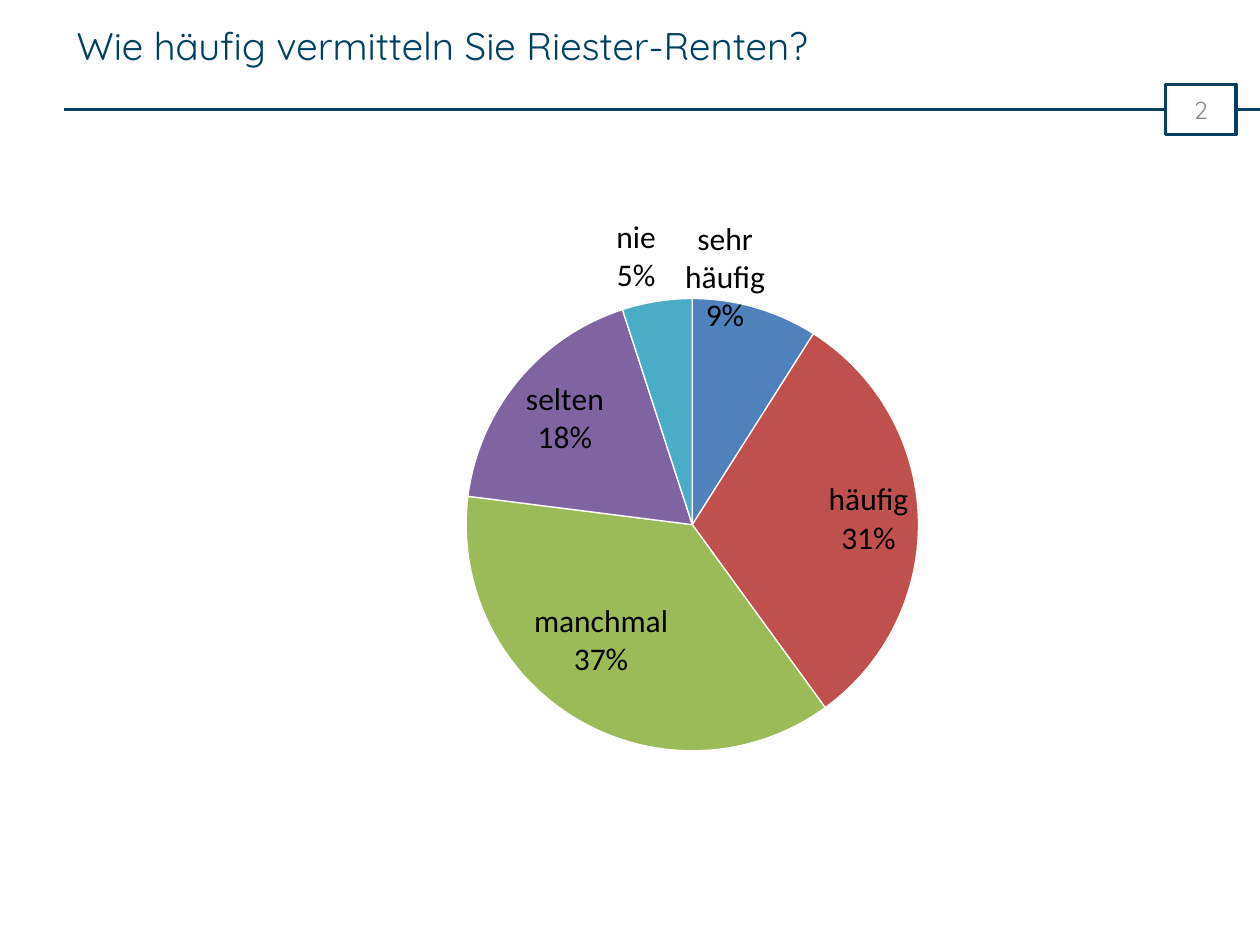
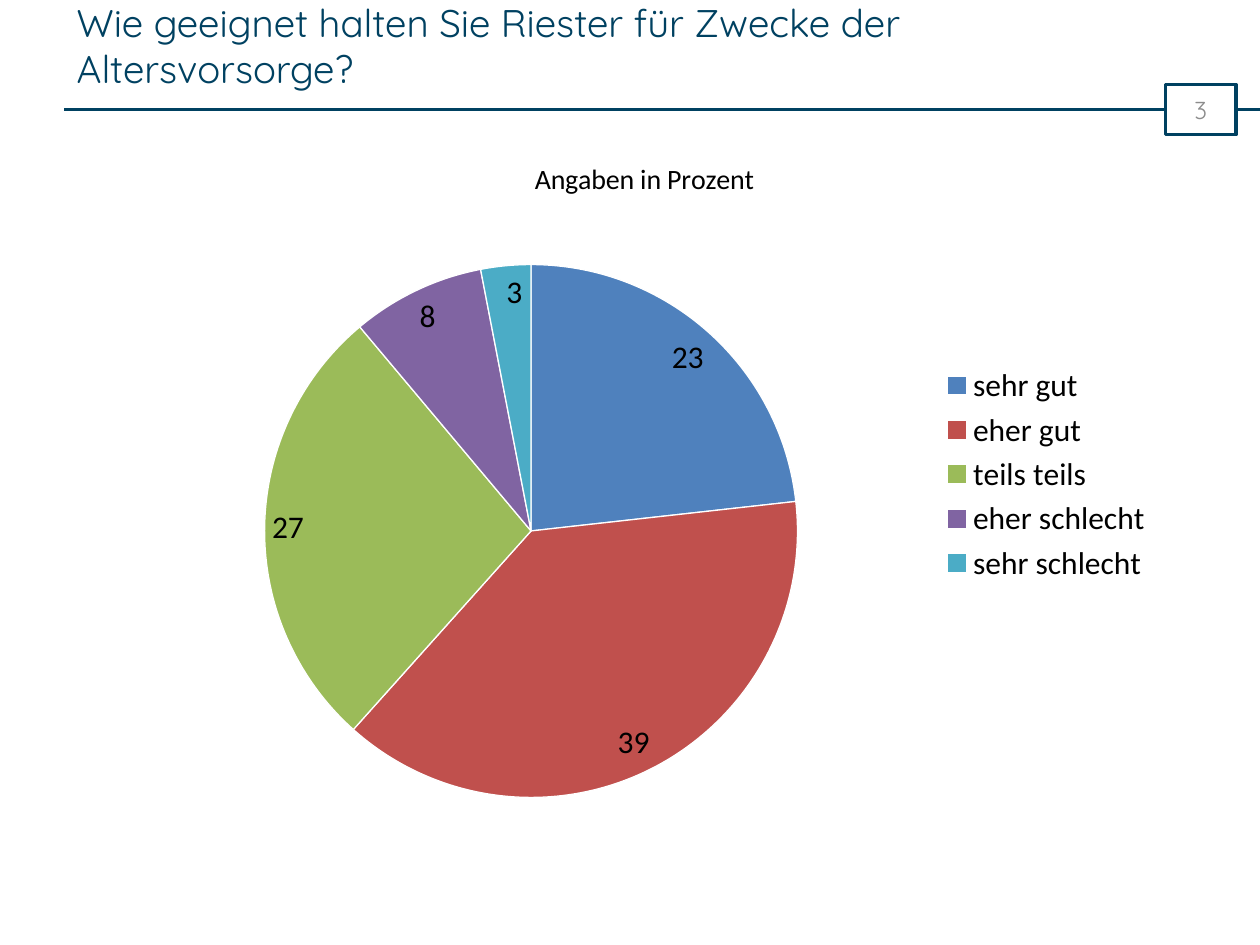
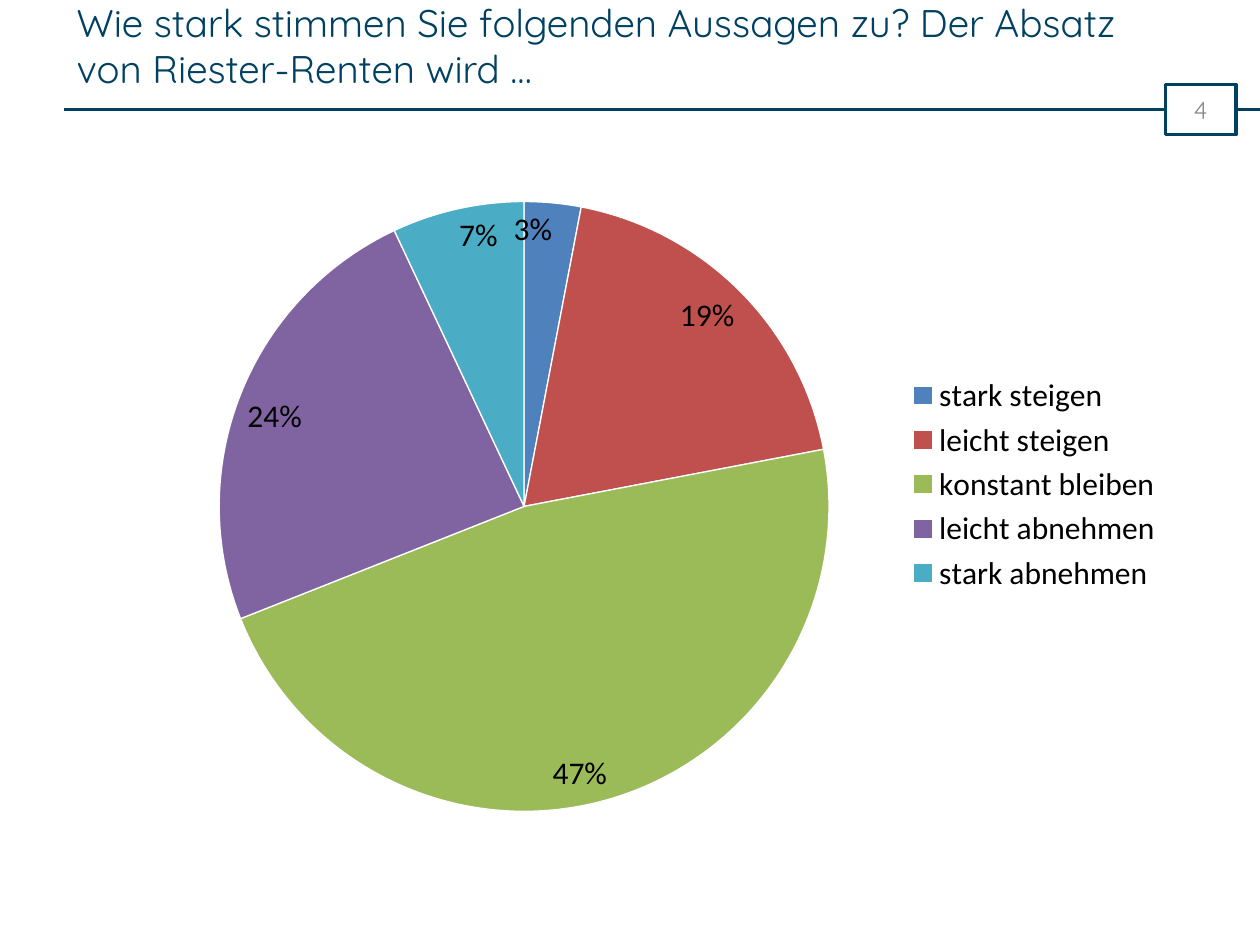
import dataclasses
import pptx
import pptx.chart.data
import pptx.dml.color
import pptx.enum.chart
import pptx.enum.shapes
import pptx.enum.text
import pptx.oxml
import pptx.oxml.ns
import pptx.util


@dataclasses.dataclass(frozen=True)
class Theme:
    navy: str = "004161"
    gray: str = "8C8C8C"
    black: str = "000000"
    white: str = "FFFFFF"
    hues: tuple = ("4F81BD", "C0504D", "9BBB59", "8064A2", "4BACC6")
    head: str = "Quicksand"
    body: str = "Calibri"
    title: int = 22
    label: int = 18
    note: int = 16
    page: int = 14
    rule: int = 2
    edge: float = 0.75


theme = Theme()
rgb = pptx.dml.color.RGBColor.from_string
place = pptx.enum.chart.XL_LABEL_POSITION
middle = pptx.enum.text.MSO_ANCHOR.MIDDLE
center = pptx.enum.text.PP_ALIGN.CENTER


def text(frame, words, size=theme.label, font=theme.body, color=theme.black, align=None, anchor=None):
    if anchor is not None:
        frame.word_wrap = True
        frame.vertical_anchor = anchor
    frame.text = words
    for para in frame.paragraphs:
        if align is not None:
            para.alignment = align
        for run in para.runs:
            run.font.size = pptx.util.Pt(size)
            run.font.name = font
            run.font.bold = False
            run.font.color.rgb = rgb(color)


def layout(**marks):
    tags = "".join(f'<c:{key} val="{val}"/>' for key, val in marks.items())
    space = pptx.oxml.ns.nsdecls("c")
    return pptx.oxml.parse_xml(f"<c:layout {space}><c:manualLayout>{tags}</c:manualLayout></c:layout>")


deck = pptx.Presentation()
deck.slide_width = pptx.util.Inches(10)
deck.slide_height = pptx.util.Inches(7.5)
col = deck.slide_width / 10
row = deck.slide_height / 7.5

wide = (1.14, 1.11, 8.19, 5.47)
pages = [
    dict(title="Wie häufig vermitteln Sie Riester-Renten?",
         name="Series 1", area=wide, pie=(3.7, 2.37, 3.59),
         cats=("sehr häufig", "häufig", "manchmal", "selten", "nie"), vals=(9, 31, 37, 18, 5),
         legend=False, marks={0: "sehr\nhäufig\n9%"}, shift=(-0.07, 0.05)),
    dict(title="Wie geeignet halten Sie Riester für Zwecke der Altersvorsorge?",
         name="Angaben in Prozent", area=(0.98, 1.07, 8.27, 5.39), pie=(2.1, 2.1, 4.23),
         cats=("sehr gut", "eher gut", "teils teils", "eher schlecht", "sehr schlecht"),
         vals=(23, 38, 27, 8, 3),
         legend=True, marks=dict(enumerate(("23", "39", "27", "8", "3"))), note="Angaben in Prozent"),
    dict(title="Wie stark stimmen Sie folgenden Aussagen zu? Der Absatz von Riester-Renten wird …",
         name="Series 1", area=wide, pie=(1.74, 1.6, 4.84),
         cats=("stark steigen", "leicht steigen", "konstant bleiben", "leicht abnehmen", "stark abnehmen"),
         vals=(3, 19, 47, 24, 7), legend=True, marks={}),
]

for num, page in enumerate(pages, 2):
    slide = deck.slides.add_slide(deck.slide_layouts[6])
    shapes = slide.shapes

    rule = shapes.add_connector(pptx.enum.shapes.MSO_CONNECTOR.STRAIGHT,
                                int(0.51 * col), int(0.87 * row), int(10 * col), int(0.87 * row))
    rule.line.color.rgb = rgb(theme.navy)
    rule.line.width = pptx.util.Pt(theme.rule)
    rule._element.spPr.append(pptx.oxml.parse_xml(f"<a:effectLst {pptx.oxml.ns.nsdecls('a')}/>"))

    badge = shapes.add_shape(pptx.enum.shapes.MSO_SHAPE.RECTANGLE,
                             int(9.25 * col), int(0.67 * row), int(0.56 * col), int(0.4 * row))
    badge.shadow.inherit = False
    badge.fill.solid()
    badge.fill.fore_color.rgb = rgb(theme.white)
    badge.line.color.rgb = rgb(theme.navy)
    badge.line.width = pptx.util.Pt(theme.rule)
    text(badge.text_frame, str(num), size=theme.page, font=theme.head, color=theme.gray,
         align=center, anchor=middle)

    title = shapes.add_textbox(int(0.51 * col), int(-0.07 * row), int(8.98 * col), int(0.86 * row))
    text(title.text_frame, page["title"], size=theme.title, font=theme.head, color=theme.navy, anchor=middle)

    data = pptx.chart.data.CategoryChartData()
    data.categories = page["cats"]
    data.add_series(page["name"], page["vals"])
    left, top, width, height = page["area"]
    chart = shapes.add_chart(pptx.enum.chart.XL_CHART_TYPE.PIE, int(left * col), int(top * row),
                             int(width * col), int(height * row), data).chart
    chart.font.name = theme.body
    chart.font.size = pptx.util.Pt(theme.label)
    chart.font.color.rgb = rgb(theme.black)
    chart.has_title = "note" in page
    if chart.has_title:
        text(chart.chart_title.text_frame, page["note"], size=theme.note)
    chart.has_legend = page["legend"]
    if chart.has_legend:
        chart.legend.position = pptx.enum.chart.XL_LEGEND_POSITION.RIGHT
        chart.legend.include_in_layout = False

    plot = chart.plots[0]
    plot.vary_by_categories = True
    series = plot.series[0]
    labels = series.data_labels
    labels.show_value = False
    labels.show_percentage = True
    labels.show_category_name = not page["legend"]
    labels.number_format = "0%"
    labels.number_format_is_linked = False
    labels.position = place.INSIDE_END if page["legend"] else place.BEST_FIT

    for spot, shade in enumerate(theme.hues):
        point = series.points[spot]
        point.format.fill.solid()
        point.format.fill.fore_color.rgb = rgb(shade)
        point.format.line.color.rgb = rgb(theme.white)
        point.format.line.width = pptx.util.Pt(theme.edge)
        if spot in page["marks"]:
            text(point.data_label.text_frame, page["marks"][spot])
            point.data_label.position = place.OUTSIDE_END if "shift" in page else place.INSIDE_END

    root = chart.element
    for last in root.xpath(".//c:ser/c:dLbls/c:showBubbleSize"):
        last.addnext(pptx.oxml.parse_xml(f"<c:separator {pptx.oxml.ns.nsdecls('c')}>\n</c:separator>"))
    if "shift" in page:
        across, down = page["shift"]
        root.xpath(".//c:dLbl/c:idx")[0].addnext(layout(x=across, y=down))

    frame = root.xpath(".//c:plotArea")[0]
    for old in frame.xpath("./c:layout"):
        frame.remove(old)
    start, upper, span = page["pie"]
    frame.insert(0, layout(layoutTarget="inner", xMode="edge", yMode="edge",
                           x=(start - left) / width, y=(upper - top) / height,
                           w=span / width, h=span / height))

deck.save("out.pptx")
